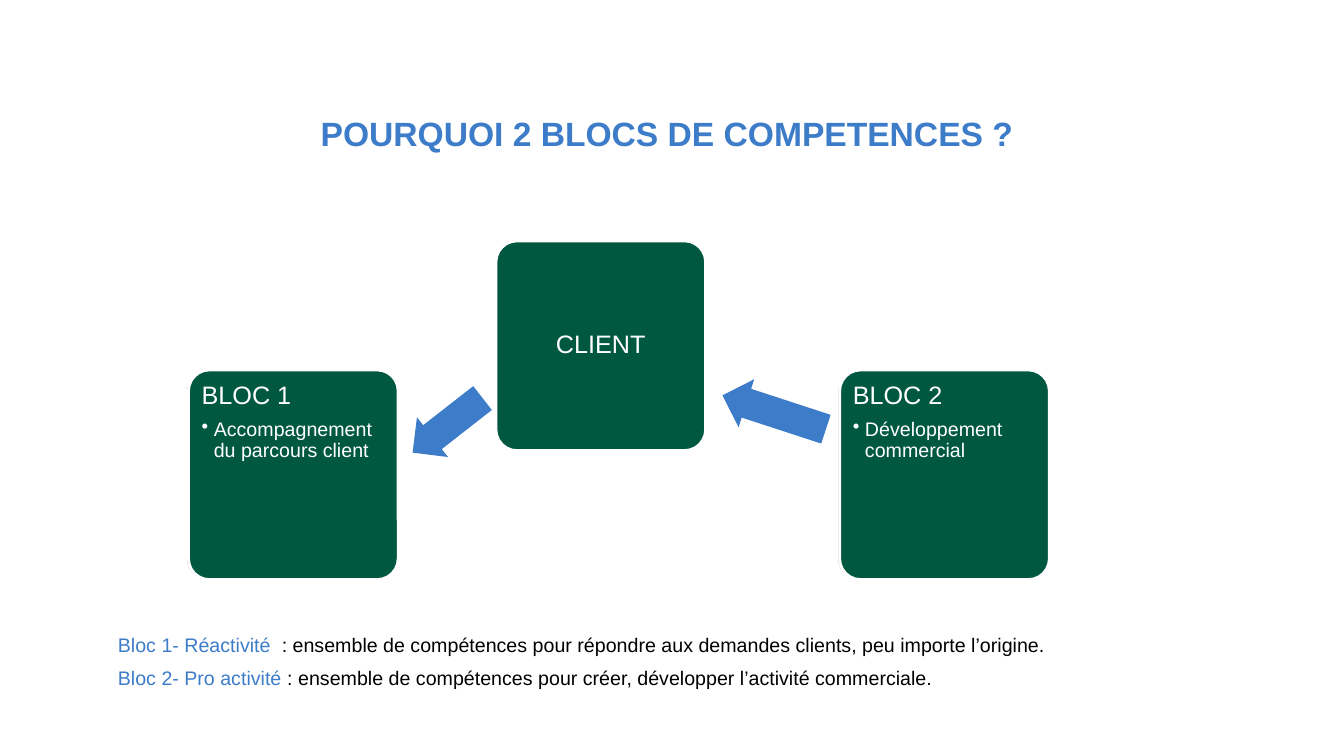
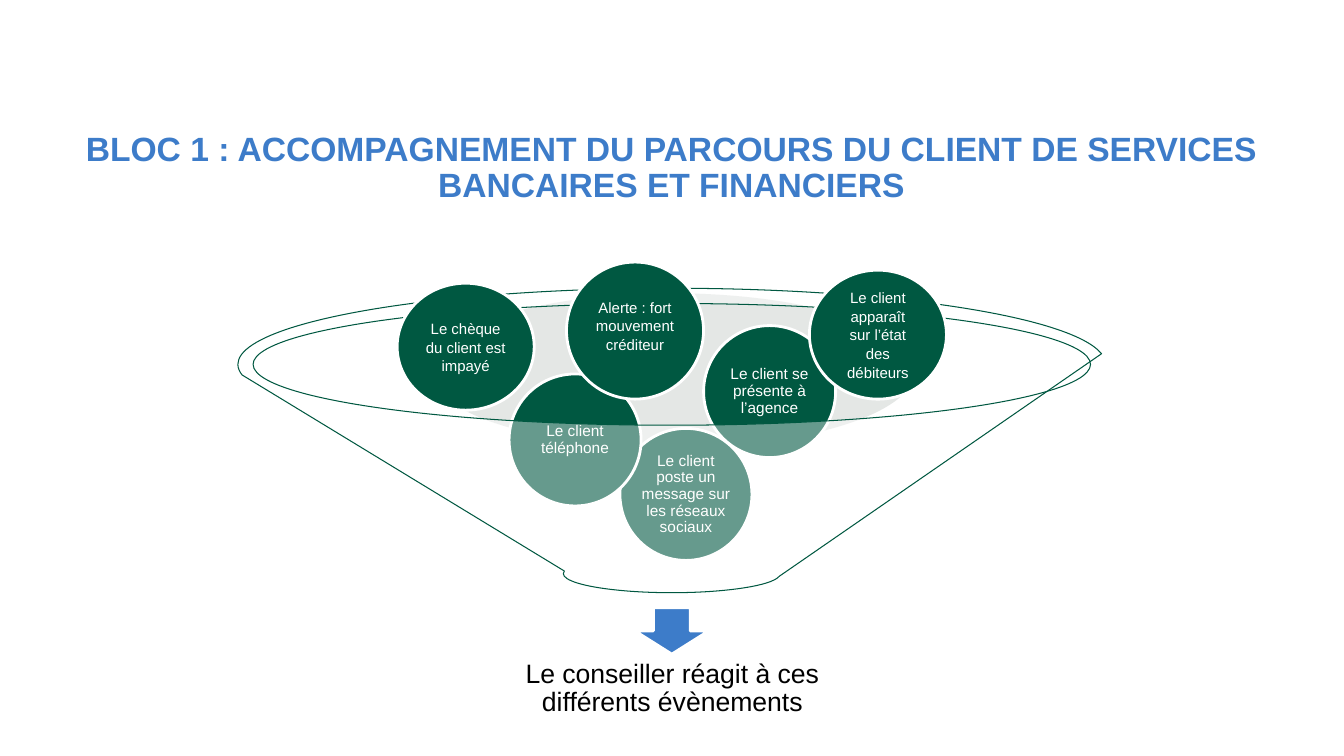
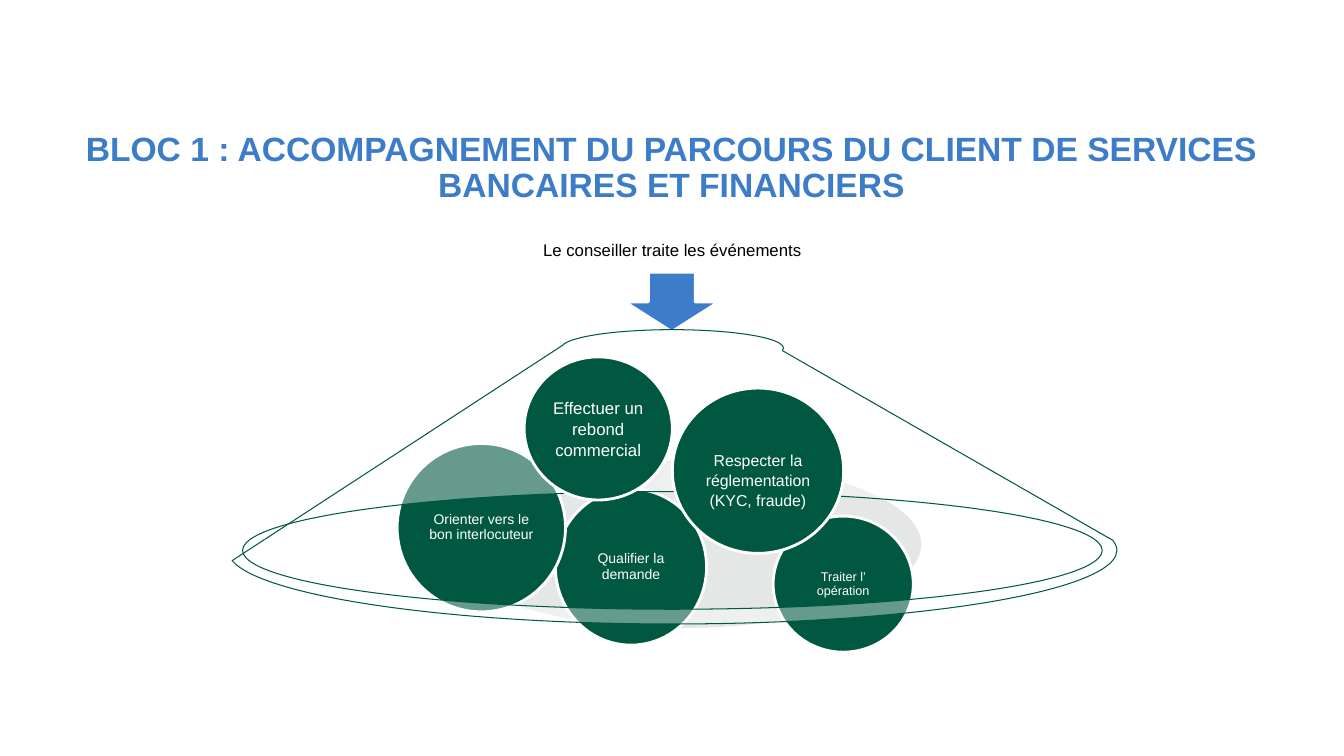
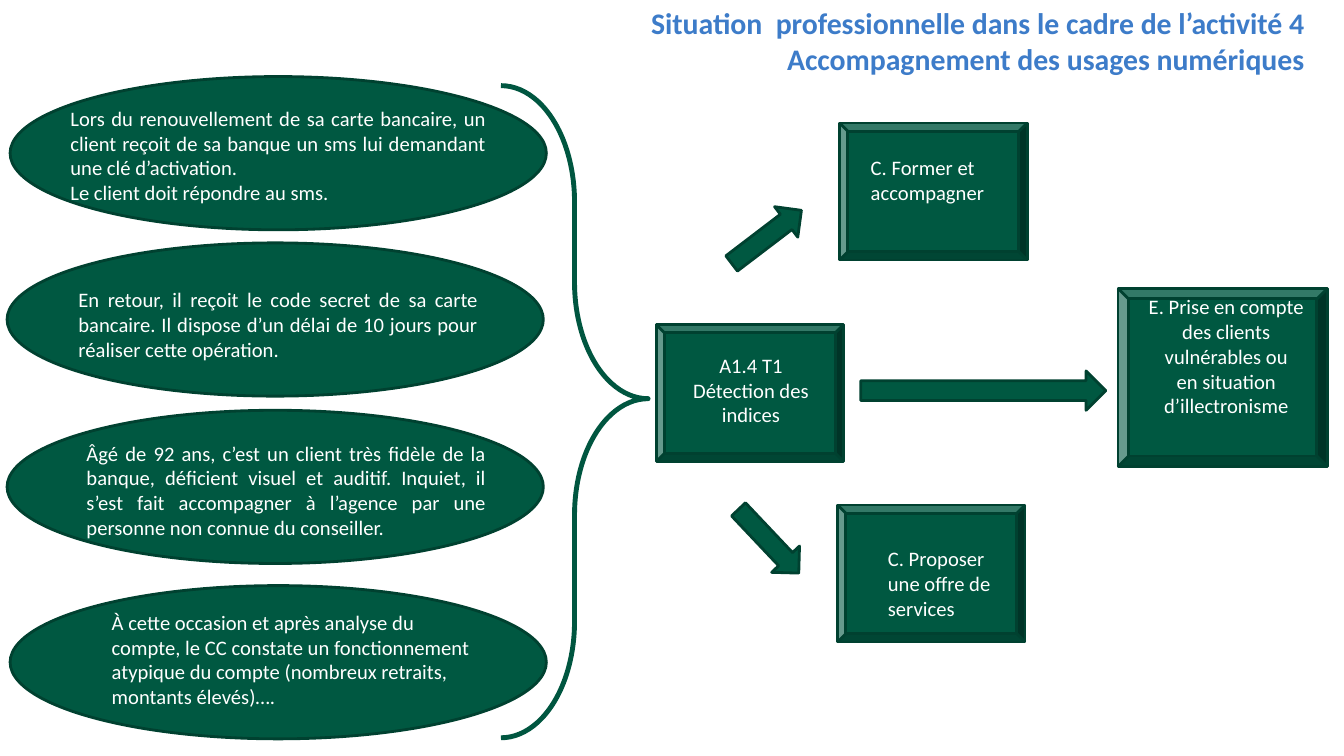
from typing import NamedTuple

from lxml import etree
from pptx import Presentation
from pptx.dml.color import RGBColor
from pptx.enum.shapes import MSO_SHAPE as Shape
from pptx.enum.text import MSO_ANCHOR as Anchor, PP_ALIGN as Align
from pptx.oxml.ns import qn
from pptx.util import Inches, Pt

CELL = Inches(0.1)  # side of one cell of the slide grid
COLUMNS, ROWS = 133.33, 75

GREEN = RGBColor(0x00, 0x58, 0x41)
DARK_GREEN = RGBColor(0x00, 0x41, 0x30)
BRACE_GREEN = RGBColor(0x00, 0x56, 0x40)
BLUE = RGBColor(0x3D, 0x7C, 0xC9)
GREY = RGBColor(0xBD, 0xC4, 0xC0)
WHITE = RGBColor(0xFF, 0xFF, 0xFF)
BLACK = RGBColor(0x00, 0x00, 0x00)

BLOCK_1_TITLE = ("BLOC 1 : ACCOMPAGNEMENT DU PARCOURS DU CLIENT DE SERVICES "
                 "BANCAIRES ET FINANCIERS")


class Box(NamedTuple):
    """A rectangle in grid cells."""
    left: float
    top: float
    width: float
    height: float

    def inside(self, left, top, width, height):
        return Box(self.left + left, self.top + top, width, height)

    def lengths(self):
        return [round(cells * CELL) for cells in self]


def write(shape, paragraphs, size, color=WHITE, font="Arial", bold=False,
          align=Align.LEFT, anchor=Anchor.TOP, insets=(0.1, 0.05), spacing=1, after=0):
    """Fill a shape; a paragraph is a string or a list of (text, colour) runs."""
    frame = shape.text_frame
    frame.word_wrap = True
    frame.vertical_anchor = anchor
    frame.margin_left = frame.margin_right = Inches(insets[0])
    frame.margin_top = frame.margin_bottom = Inches(insets[1])
    for index, content in enumerate(paragraphs):
        paragraph = frame.add_paragraph() if index else frame.paragraphs[0]
        paragraph.alignment = align
        paragraph.line_spacing = spacing
        paragraph.space_after = Pt(after)
        paragraph.font.size = Pt(size)
        paragraph.font.name = font
        paragraph.font.bold = bold
        if isinstance(content, str):
            paragraph.add_run().text = content
            paragraph.font.color.rgb = color
        else:
            for text, run_color in content:
                run = paragraph.add_run()
                run.text = text
                run.font.color.rgb = run_color
    return frame


def add_text(slide, box, paragraphs, size, **style):
    return write(slide.shapes.add_textbox(*box.lengths()), paragraphs, size, **style)


def add_title(slide, box, paragraphs, size=24, **style):
    style = {"align": Align.CENTER, **style}
    add_text(slide, box, paragraphs, size, color=BLUE, bold=True, **style)


def draw(slide, kind, box, fill=None, line=None, weight=2, rotation=0,
         adjustments=(), opacity=None):
    shape = slide.shapes.add_shape(kind, *box.lengths())
    shape.shadow.inherit = False
    shape.rotation = rotation
    for index, value in enumerate(adjustments):
        shape.adjustments[index] = value
    if fill is None:
        shape.fill.background()
    else:
        shape.fill.solid()
        shape.fill.fore_color.rgb = fill
        if opacity is not None:
            color = shape.fill._xPr.find(qn("a:solidFill"))[0]
            etree.SubElement(color, qn("a:alpha"), val=str(opacity * 1000))
    if line is None:
        shape.line.fill.background()
    else:
        shape.line.color.rgb = line
        shape.line.width = Pt(weight)
    return shape


def add_bullet(frame, text, size):
    paragraph = frame.add_paragraph()
    properties = paragraph._p.get_or_add_pPr()
    indent = Inches(0.12)
    properties.set("marL", str(indent))
    properties.set("indent", str(-indent))
    etree.SubElement(properties, qn("a:buChar"), char="•")
    paragraph.line_spacing = 0.9
    paragraph.font.size = Pt(size)
    paragraph.font.name = "Arial"
    paragraph.font.color.rgb = WHITE
    paragraph.add_run().text = text


def block_card(slide, box, heading, detail=None):
    corner = [0.1]
    style = {"insets": (0.07, 0.07), "spacing": 0.9, "after": 6.3}
    if detail:
        draw(slide, Shape.ROUNDED_RECTANGLE, box.inside(-0.3, 0.1, box.width, box.height),
             GREY, WHITE, adjustments=corner)
    else:
        style.update(align=Align.CENTER, anchor=Anchor.MIDDLE)
    card = draw(slide, Shape.ROUNDED_RECTANGLE, box, GREEN, WHITE, adjustments=corner)
    frame = write(card, [heading], 18, **style)
    if detail:
        add_bullet(frame, detail, 14)


def blocks_diagram(slide, box):
    side = 20.8
    lower = box.height - side
    block_card(slide, box.inside(0, lower, side, side), "BLOC 1",
               "Accompagnement du parcours client")
    block_card(slide, box.inside(30.5, 0, side, side), "CLIENT")
    block_card(slide, box.inside(box.width - side, lower, side, side), "BLOC 2",
               "Développement commercial")
    for left, top, width, rotation in [(21.3, 15.8, 8.8, 142), (52.7, 14.5, 10.8, 198.1)]:
        draw(slide, Shape.RIGHT_ARROW, box.inside(left, top, width, 5), BLUE,
             rotation=rotation, adjustments=(0.6, 0.5))


def blocks_slide(slide):
    add_title(slide, Box(0, 10.7, COLUMNS - 1, 5), ["POURQUOI 2 BLOCS DE COMPETENCES ?"])
    blocks_diagram(slide, Box(18.7, 23.9, 85.4, 33.6))
    definitions = [
        [("Bloc 1- Réactivité  ", BLUE),
         (": ensemble de compétences pour répondre aux demandes clients, "
          "peu importe l’origine.", BLACK)],
        [("Bloc 2- Pro activité ", BLUE),
         (": ensemble de compétences pour créer, développer l’activité commerciale.", BLACK)],
    ]
    add_text(slide, Box(11.7, 62.8, 116, 9.4), definitions, 14, insets=(0, 0), after=6.7)


def circle(slide, box, paragraphs, size, insets=(0.02, 0.02), spacing=0.9, shift=0):
    """Draw a labelled circle; shift moves the label down, in inches."""
    shape = draw(slide, Shape.OVAL, box, GREEN, WHITE)
    frame = write(shape, paragraphs, size, align=Align.CENTER, anchor=Anchor.MIDDLE,
                  insets=insets, spacing=spacing)
    frame.margin_top += Inches(max(2 * shift, 0))
    frame.margin_bottom += Inches(max(-2 * shift, 0))


def funnel_slide(slide, box, halo, arrow, caption, caption_size, caption_inset,
                 back, front, rotation=0):
    """Place circles behind and in front of a see-through funnel that fills the box."""
    add_title(slide, Box(5.2, 13.1, 122.8, 10.5), [BLOCK_1_TITLE],
              insets=(0, 0), spacing=0.9)
    draw(slide, Shape.OVAL, box.inside(*halo), GREY, opacity=40)
    draw(slide, Shape.DOWN_ARROW, box.inside(*arrow), BLUE, WHITE)
    add_text(slide, box.inside(*caption[1:]), [caption[0]], caption_size, color=BLACK,
             align=Align.CENTER, anchor=Anchor.MIDDLE,
             insets=(caption_inset, caption_inset), spacing=0.9)
    for place, text, size in back:
        circle(slide, box.inside(*place), [text], size)
    draw(slide, Shape.FUNNEL, box, WHITE, GREEN, 0.75, rotation, opacity=40)
    for place, paragraphs, size, inset, shift in front:
        circle(slide, box.inside(*place), paragraphs, size, (inset, 0.05), 1.04, shift)


def events_slide(slide):
    funnel_slide(
        slide, Box(23.6, 28.6, 86.1, 30.2),
        halo=(19, 0.5, 48.2, 15.3), arrow=(39.4, 31.7, 7.3, 4.6),
        caption=("Le conseiller réagit à ces différents évènements", 25.7, 35.4, 34.8, 8.7),
        caption_size=19, caption_inset=0.15,
        back=[
            ((37.9, 13.9, 13.1, 13.1), "Le client poste un message sur les réseaux sociaux", 11),
            ((26.9, 8.5, 13.1, 13.1), "Le client téléphone", 11),
            ((46.2, 3.7, 13.1, 13.1), "Le client se présente à l’agence", 11),
        ],
        front=[
            ((15.8, -0.5, 13.6, 12.6), ["Le chèque du client est impayé"], 10.7, 0.05, 0),
            ((32.6, -2.6, 13.6, 13.6), ["Alerte : fort mouvement créditeur"], 10.7, 0.05, -0.05),
            ((56.7, -1.8, 13.6, 12.8), ["Le client apparaît sur l’état des débiteurs"],
             10.7, 0.1, 0),
        ])


def handling_slide(slide):
    funnel_slide(
        slide, Box(22.6, 32.7, 88.2, 29.2), rotation=180,
        halo=(21, 13, 47.8, 16.6), arrow=(39.4, -5.7, 9.3, 5.9),
        caption=("Le conseiller traite les événements", 10.5, -9.9, 67.2, 4.3),
        caption_size=12, caption_inset=0.09,
        back=[
            ((54.1, 18.5, 13.9, 13.5), "Traiter l’ opération", 9),
            ((32.5, 15.8, 15, 15.5), "Qualifier la demande", 10),
            ((16.8, 11.3, 16.7, 16.7), "Orienter vers le bon interlocuteur", 10),
        ],
        front=[
            ((29.4, 2.7, 14.7, 14.2), ["Effectuer un rebond commercial"], 12, 0.05, 0),
            ((44.1, 5.8, 17, 16.4), ["Respecter la réglementation", "(KYC, fraude)"],
             11.3, 0.05, 0.09),
        ])


def captioned(slide, kind, box, text_place, paragraphs, align, adjustments=()):
    """Draw an outlined shape with a text at (left, top, width) inside it."""
    draw(slide, kind, box, GREEN, DARK_GREEN, adjustments=adjustments)
    left, top, width = text_place
    add_text(slide, box.inside(left, top, width, box.height - 2 * top), paragraphs, 14.7,
             font="Calibri", align=align)


def situation_column(slide, box):
    situations = [
        (0.3, 0, (5, 2.4, 43.2), Align.JUSTIFY,
         ["Lors du renouvellement de sa carte bancaire, un client reçoit de sa banque un sms "
          "lui demandant une clé d’activation.", "Le client doit répondre au sms."]),
        (0, 16.5, (6.1, 3.9, 41.6), Align.JUSTIFY,
         ["En retour, il reçoit le code secret de sa carte bancaire. Il dispose d’un délai "
          "de 10 jours pour réaliser cette opération."]),
        (0, 33.1, (6.9, 2.5, 41.6), Align.JUSTIFY,
         ["Âgé de 92 ans, c’est un client très fidèle de la banque, déficient visuel et "
          "auditif. Inquiet, il s’est fait accompagner à l’agence par une personne non "
          "connue du conseiller."]),
        (0.3, 50.5, (9.1, 1.9, 38.3), Align.LEFT,
         ["À cette occasion et après analyse du compte, le CC constate un fonctionnement "
          "atypique du compte (nombreux retraits, montants élevés)…."]),
    ]
    for left, top, text_place, align, paragraphs in situations:
        captioned(slide, Shape.OVAL, box.inside(left, top, 53.2, 15.2), text_place,
                  paragraphs, align)
    draw(slide, Shape.RIGHT_BRACE, box.inside(49, 0.9, 14.6, 64.7), None, BRACE_GREEN, 3.5,
         adjustments=(0.79, 0.48))


def skills_map(slide, box):
    skills = [
        ((0, 20, 18.6, 13.6), (2.1, 2.3, 14.6), Align.CENTER,
         ["A1.4 T1 Détection des indices"]),
        ((18.2, 0, 18.6, 13.6), (2.1, 2.7, 14.6), Align.LEFT, ["C. Former et accompagner"]),
        ((18, 37.9, 18.6, 13.6), (4, 3.6, 12.6), Align.LEFT,
         ["C. Proposer une offre de services"]),
        ((45.8, 16.4, 20.8, 17.7), (1.8, 0.1, 17.9), Align.CENTER,
         ["E. Prise en compte des clients vulnérables ou", "en situation d’illectronisme"]),
    ]
    for place, text_place, align, paragraphs in skills:
        captioned(slide, Shape.BEVEL, box.inside(*place), text_place, paragraphs, align,
                  [0.06])
    arrows = [((20.3, 24.6, 24.3, 3.9), 0), ((6.6, 9.4, 8.7, 3.8), 322.7),
              ((6.8, 39.6, 8.7, 3.8), 46.6)]
    for place, rotation in arrows:
        draw(slide, Shape.RIGHT_ARROW, box.inside(*place), GREEN, DARK_GREEN,
             rotation=rotation)


def situation_slide(slide):
    add_title(slide, Box(26.8, 0, 103.6, 8.2),
              ["Situation  professionnelle dans le cadre de l’activité 4",
               "Accompagnement des usages numériques"],
              21.3, font="Calibri", align=Align.RIGHT)
    situation_column(slide, Box(0.7, 7.6, 63.6, 65.7))
    skills_map(slide, Box(65.1, 12.2, 66.6, 51.5))


def main():
    presentation = Presentation()
    presentation.slide_width = round(COLUMNS * CELL)
    presentation.slide_height = ROWS * CELL
    blank = presentation.slide_layouts[6]
    for build in (blocks_slide, events_slide, handling_slide, situation_slide):
        build(presentation.slides.add_slide(blank))
    presentation.save("out.pptx")


if __name__ == "__main__":
    main()
